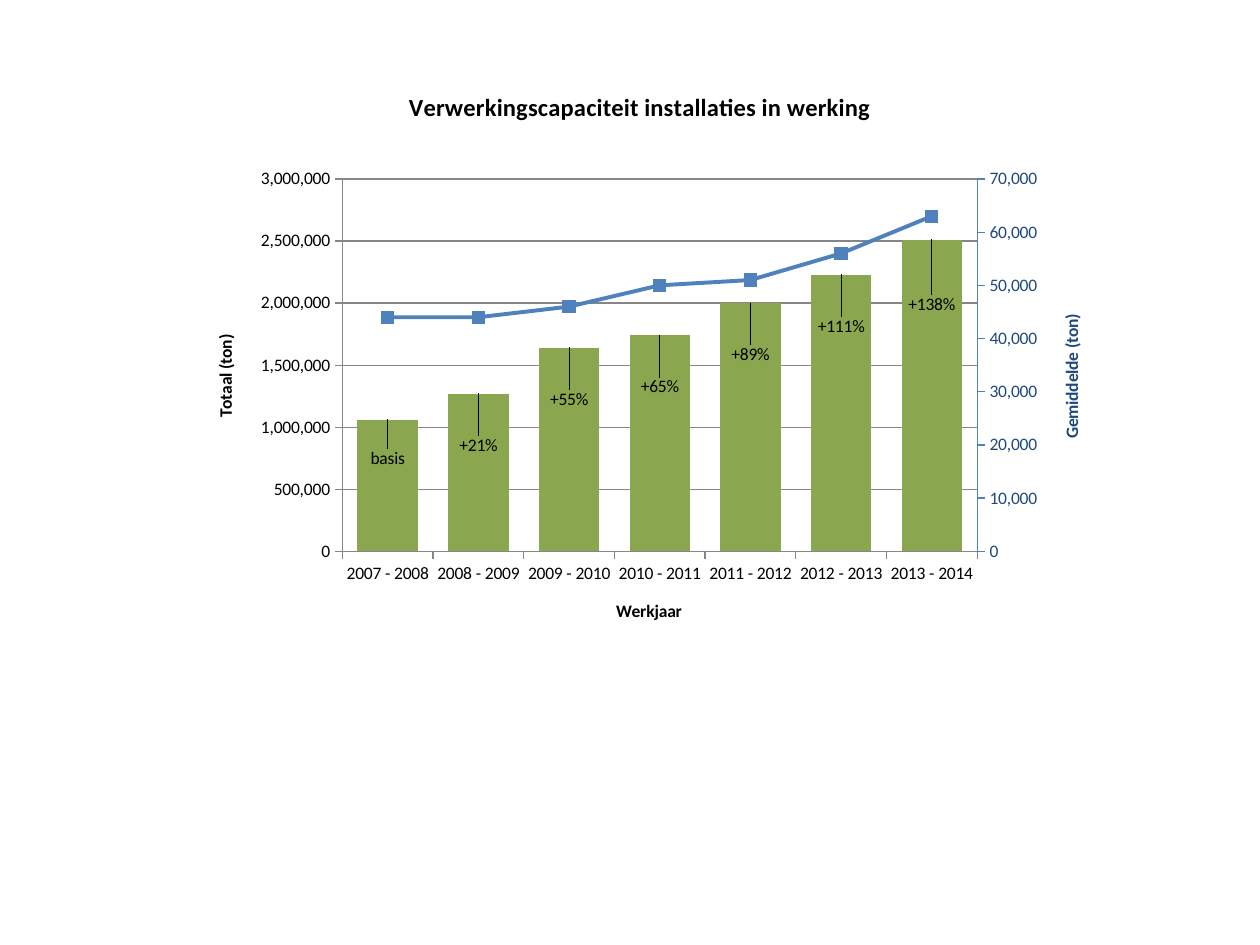
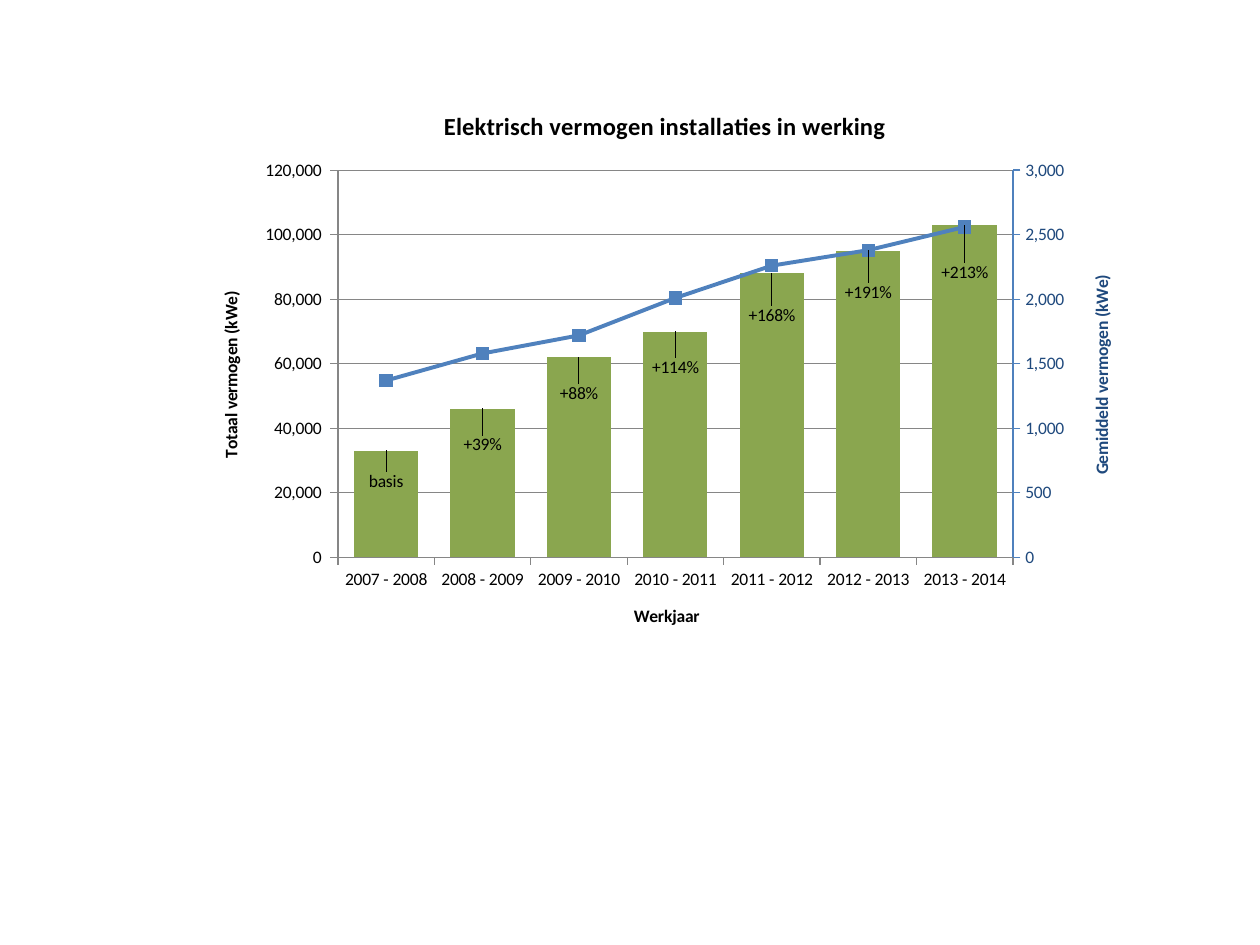
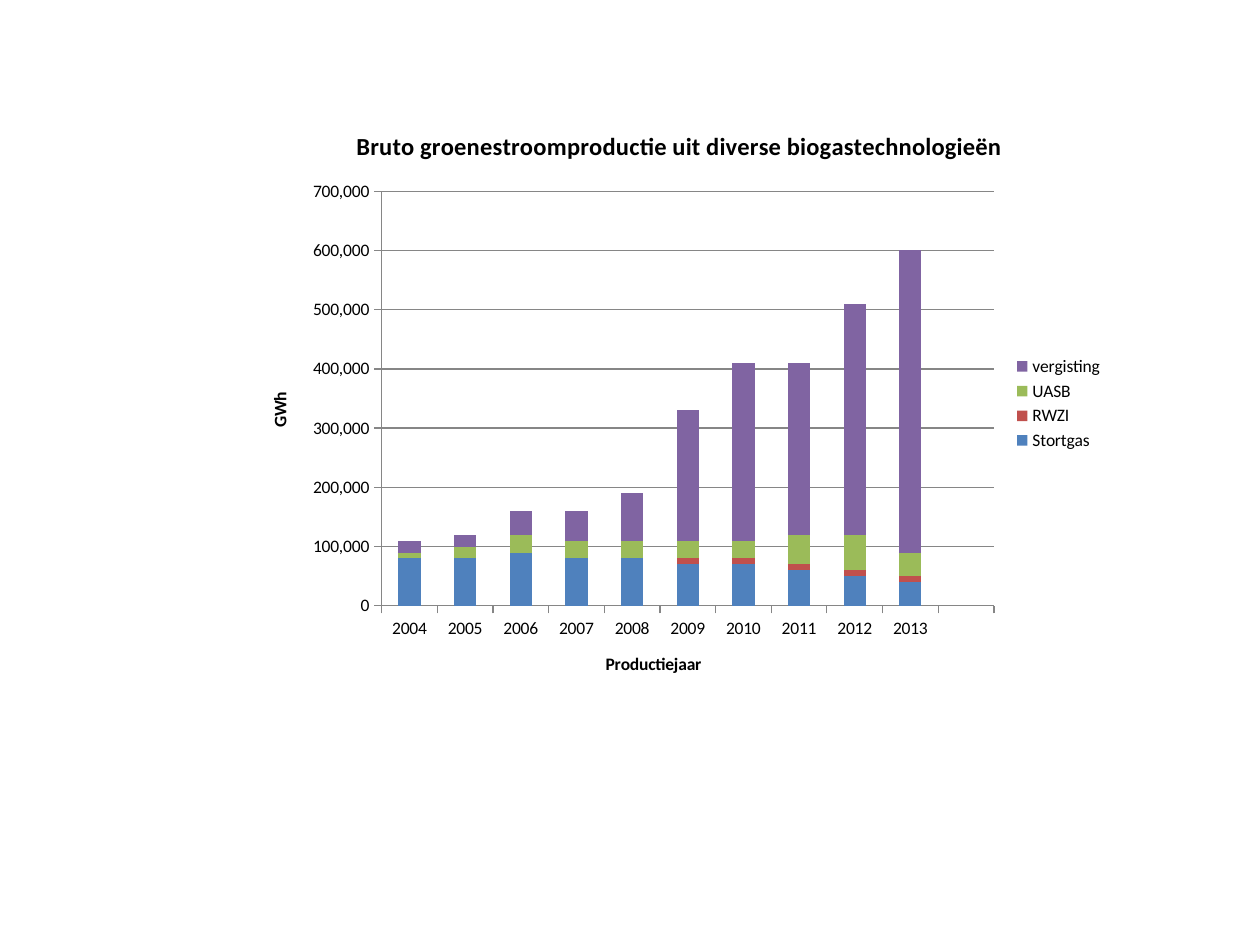
from pptx import Presentation
from pptx.chart.axis import ValueAxis
from pptx.chart.data import CategoryChartData
from pptx.dml.color import RGBColor
from pptx.enum.chart import (XL_CHART_TYPE, XL_LABEL_POSITION, XL_LEGEND_POSITION,
                             XL_MARKER_STYLE, XL_TICK_MARK)
from pptx.oxml import parse_xml
from pptx.oxml.ns import nsdecls, qn
from pptx.util import Emu, Pt

EMU_PER_PX = 914400 / 126
FONT = "Calibri"
BLACK, GREY, NAVY = "000000", "868686", "1F497D"
BLUE, RED, LIME, PURPLE, GREEN = "4F81BD", "C0504D", "9BBB59", "8064A2", "8AA64F"
THOUSANDS = "#,##0"
BRACKETED = r"#,##0_);\(#,##0\)"
WORK_YEARS = [f"{year} - {year + 1}" for year in range(2007, 2014)]
PRODUCTION_YEARS = [str(year) for year in range(2004, 2014)] + [""]


def px(length):
    return Emu(round(length * EMU_PER_PX))


def color(value):
    return RGBColor.from_string(value)


def set_font(font, size=10, bold=False, fill=BLACK):
    font.name = FONT
    font.size = Pt(size)
    font.bold = bold
    font.color.rgb = color(fill)


def manual_layout(**settings):
    entries = "".join(f'<c:{name} val="{value}"/>' for name, value in settings.items())
    return parse_xml(f'<c:layout {nsdecls("c")}><c:manualLayout>{entries}'
                     '</c:manualLayout></c:layout>')


def add_chart(deck, kind, place, title, categories, series, gap):
    page = deck.slides.add_slide(deck.slide_layouts[6])
    data = CategoryChartData(number_format="General")
    data.categories = categories
    for name, values, _ in series:
        data.add_series(name, values)
    chart = page.shapes.add_chart(kind, *map(px, place), data).chart
    set_font(chart.font)
    chart.has_legend = False
    chart.has_title = True
    set_title(chart.chart_title, title, 14)
    plot = chart.plots[0]
    plot.gap_width = gap
    plot.vary_by_categories = False
    for shown, (_, _, fill) in zip(plot.series, series):
        shown.format.fill.solid()
        shown.format.fill.fore_color.rgb = color(fill)
    return chart


def set_title(title, text, size=10, fill=BLACK):
    title.text_frame.text = text
    set_font(title.text_frame.paragraphs[0].font, size, True, fill)


def style_axis(axis, title, fill=BLACK, line=GREY):
    axis.has_title = True
    set_title(axis.axis_title, title, fill=fill)
    axis.major_tick_mark = XL_TICK_MARK.OUTSIDE
    axis.minor_tick_mark = XL_TICK_MARK.NONE
    axis.format.line.color.rgb = color(line)
    axis.format.line.width = Pt(0.75)
    set_font(axis.tick_labels.font, fill=fill)


def style_value_axis(axis, title, top, step, number_format, grid=True, **colors):
    style_axis(axis, title, **colors)
    body = axis.axis_title.text_frame._txBody.find(qn("a:bodyPr"))
    body.set("rot", "-5400000")
    body.set("vert", "horz")
    axis.minimum_scale, axis.maximum_scale, axis.major_unit = 0, top, step
    axis.tick_labels.number_format = number_format
    axis.tick_labels.number_format_is_linked = False
    axis.has_major_gridlines = grid
    if grid:
        axis.major_gridlines.format.line.color.rgb = color(GREY)
        axis.major_gridlines.format.line.width = Pt(0.75)


def move_to_right_axis(chart):
    average = chart.plots[0].series[1]._element
    for tag in ("c:invertIfNegative", "c:spPr"):
        for child in average.findall(qn(tag)):
            average.remove(child)
    line_plot = parse_xml(
        f'<c:lineChart {nsdecls("c")}><c:grouping val="standard"/><c:varyColors val="0"/>'
        '<c:marker val="1"/><c:axId val="5001"/><c:axId val="5002"/></c:lineChart>')
    chart.plots[0]._element.addnext(line_plot)
    line_plot.insert(2, average)
    hidden_axis = parse_xml(
        f'<c:catAx {nsdecls("c")}><c:axId val="5001"/>'
        '<c:scaling><c:orientation val="minMax"/></c:scaling><c:delete val="1"/>'
        '<c:axPos val="b"/><c:crossAx val="5002"/><c:crosses val="autoZero"/></c:catAx>')
    right_axis = parse_xml(
        f'<c:valAx {nsdecls("c")}><c:axId val="5002"/>'
        '<c:scaling><c:orientation val="minMax"/></c:scaling><c:delete val="0"/>'
        '<c:axPos val="r"/><c:tickLblPos val="nextTo"/><c:crossAx val="5001"/>'
        '<c:crosses val="max"/><c:crossBetween val="between"/></c:valAx>')
    chart.value_axis._element.addnext(hidden_axis)
    hidden_axis.addnext(right_axis)
    return ValueAxis(right_axis)


def style_average_line(series):
    series.smooth = False
    series.format.line.color.rgb = color(BLUE)
    series.format.line.width = Pt(2.25)
    marker = series.marker
    marker.style = XL_MARKER_STYLE.SQUARE
    marker.size = 7
    marker.format.fill.solid()
    marker.format.fill.fore_color.rgb = color(BLUE)
    marker.format.line.color.rgb = color(BLUE)


def add_growth_labels(series, labels):
    for index, (text, drop) in enumerate(labels):
        label = series.points[index].data_label
        label.text_frame.text = text
        set_font(label.text_frame.paragraphs[0].font)
        label.position = XL_LABEL_POSITION.OUTSIDE_END
        entry = series._element.findall(".//" + qn("c:dLbl"))[index]
        entry.find(qn("c:idx")).addnext(manual_layout(x=0, y=drop))
    series._element.find(qn("c:dLbls")).append(parse_xml(
        f'<c:extLst {nsdecls("c")}><c:ext uri="{{CE6537A1-D6FC-4f65-9D91-7224C49458BB}}" '
        'xmlns:c15="http://schemas.microsoft.com/office/drawing/2012/chart">'
        '<c15:showLeaderLines val="1"/></c:ext></c:extLst>'))


def add_capacity_chart(deck, place, title, totals, averages, labels, left, right):
    series = [("Series 1", totals, GREEN), ("Series 2", averages, BLUE)]
    chart = add_chart(deck, XL_CHART_TYPE.COLUMN_CLUSTERED, place, title,
                      WORK_YEARS, series, 50)
    style_axis(chart.category_axis, "Werkjaar")
    style_value_axis(chart.value_axis, *left)
    right_axis = move_to_right_axis(chart)
    style_value_axis(right_axis, *right, grid=False, fill=NAVY, line=BLUE)
    style_average_line(chart.plots[1].series[0])
    add_growth_labels(chart.plots[0].series[0], labels)
    return chart


def place_plot(chart, x, y, w, h):
    area = chart.plots[0]._element.getparent()
    for layout in area.findall(qn("c:layout")):
        area.remove(layout)
    area.insert(0, manual_layout(layoutTarget="inner", xMode="edge", yMode="edge",
                                 x=x, y=y, w=w, h=h))


def add_production_chart(deck):
    thousands = [
        ("Stortgas", [80, 80, 90, 80, 80, 70, 70, 60, 50, 40], BLUE),
        ("RWZI", [0, 0, 0, 0, 0, 10, 10, 10, 10, 10], RED),
        ("UASB", [10, 20, 30, 30, 30, 30, 30, 50, 60, 40], LIME),
        ("vergisting", [20, 20, 40, 50, 80, 220, 300, 290, 390, 510], PURPLE),
    ]
    series = [(name, [value * 1000 for value in values] + [None], fill)
              for name, values, fill in thousands]
    chart = add_chart(deck, XL_CHART_TYPE.COLUMN_STACKED, (243, 106, 873, 595),
                      "Bruto groenestroomproductie uit diverse biogastechnologieën",
                      PRODUCTION_YEARS, series, 150)
    chart.plots[0].overlap = 100
    style_axis(chart.category_axis, "Productiejaar")
    style_value_axis(chart.value_axis, "GWh", 700000, 100000, THOUSANDS)
    chart.has_legend = True
    chart.legend.position = XL_LEGEND_POSITION.RIGHT
    chart.legend.include_in_layout = False
    set_font(chart.legend.font)


def main():
    deck = Presentation()
    deck.slide_width, deck.slide_height = px(1260), px(945)
    capacity = add_capacity_chart(
        deck, (144, 66, 992, 665), "Verwerkingscapaciteit installaties in werking",
        [1060000, 1270000, 1640000, 1740000, 2000000, 2230000, 2510000],
        [44000, 44000, 46000, 50000, 51000, 56000, 63000],
        [("basis", 0.08), ("+21%", 0.1), ("+55%", 0.1), ("+65%", 0.1),
         ("+89%", 0.1), ("+111%", 0.1), ("+138%", 0.12)],
        ("Totaal (ton)", 3000000, 500000, THOUSANDS),
        ("Gemiddelde (ton)", 70000, 10000, THOUSANDS))
    place_plot(capacity, 0.2, 0.17, 0.64, 0.56)
    add_capacity_chart(
        deck, (194, 86, 942, 566), "Elektrisch vermogen installaties in werking",
        [33000, 46000, 62000, 70000, 88000, 95000, 103000],
        [1370, 1580, 1720, 2010, 2260, 2380, 2560],
        [("basis", 0.08), ("+39%", 0.09), ("+88%", 0.09), ("+114%", 0.09),
         ("+168%", 0.1), ("+191%", 0.1), ("+213%", 0.11)],
        ("Totaal vermogen (kWe)", 120000, 20000, BRACKETED),
        ("Gemiddeld vermogen (kWe)", 3000, 500, BRACKETED))
    add_production_chart(deck)
    deck.save("out.pptx")


if __name__ == "__main__":
    main()
